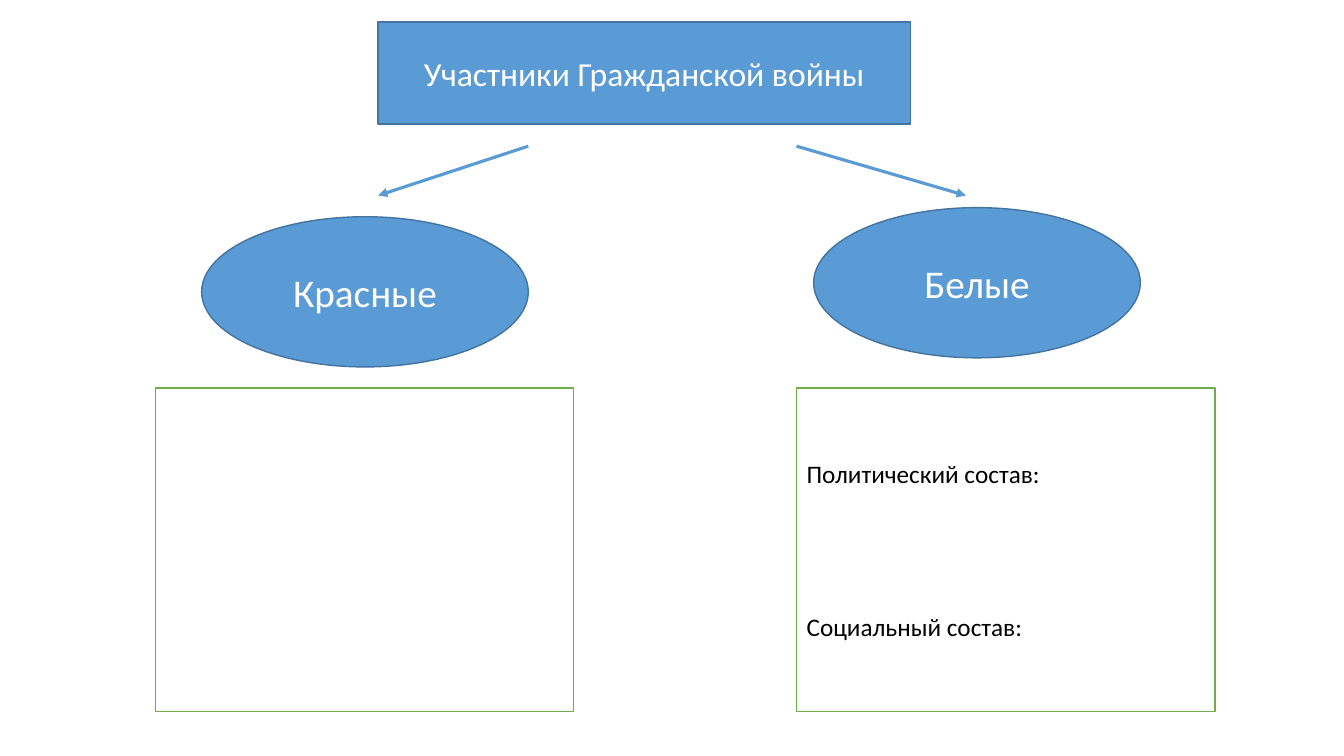
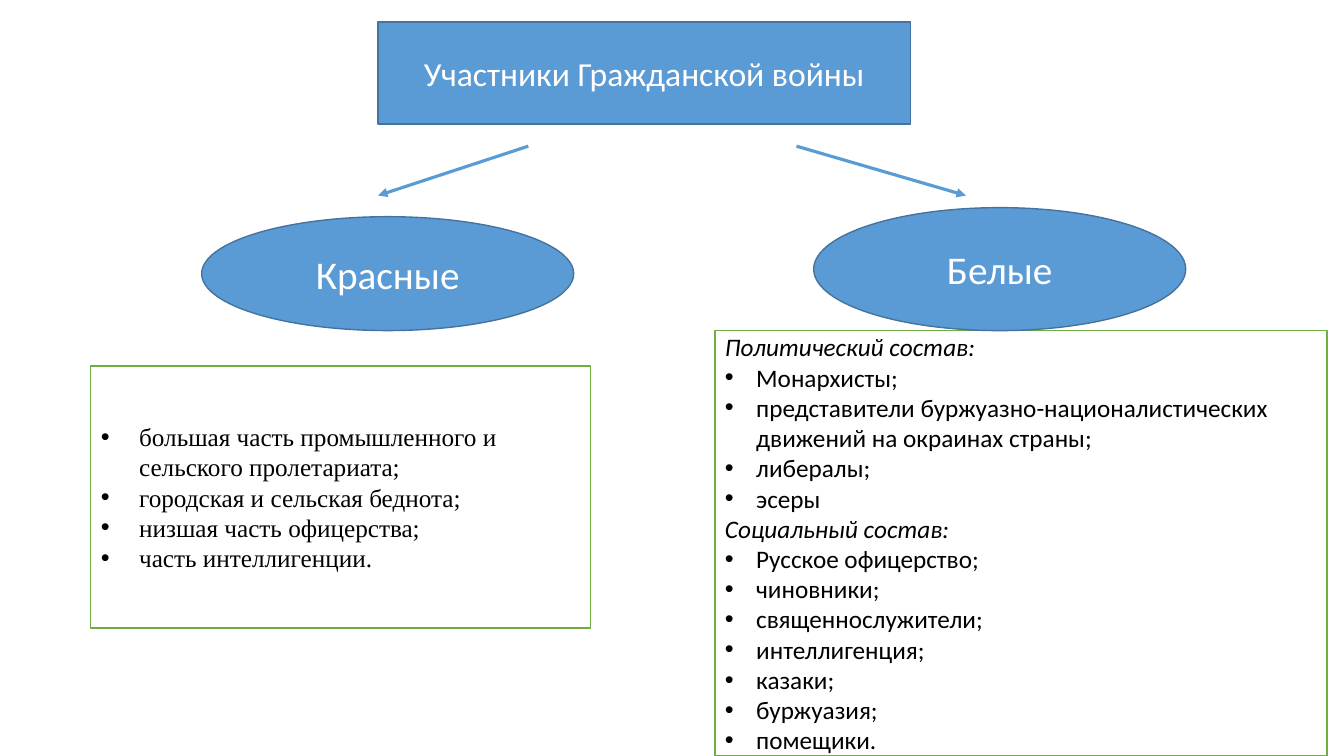
from lxml import etree
from pptx import Presentation
from pptx.dml.color import RGBColor
from pptx.enum import shapes, text
from pptx.oxml import ns
from pptx.util import Inches, Pt

COLORS = {
    "blue": "5B9BD5",
    "blue_edge": "43739E",
    "green": "70AD47",
    "white": "FFFFFF",
    "black": "000000",
}
FONT = "Calibri"
SERIF = "Times New Roman"
HEADING = "Участники Гражданской войны"
POLITICAL = "Политический состав:"
SOCIAL = "Социальный состав:"

HEADING_BOX = (3.75, 0.22, 5.28, 1.01)
ARROW_TOP, ARROW_BOTTOM = 1.45, 1.94
ARROWS = ((5.24, 3.75), (7.9, 9.58))

RED_LIST = (
    "большая часть промышленного и сельского пролетариата;",
    "городская и сельская беднота;",
    "низшая часть офицерства;",
    "часть интеллигенции.",
)
WHITE_POLITICAL = (
    "Монархисты;",
    "представители буржуазно-националистических движений на окраинах страны;",
    "либералы;",
    "эсеры",
)
WHITE_SOCIAL = (
    "Русское офицерство;",
    "чиновники;",
    "священнослужители;",
    "интеллигенция;",
    "казаки;",
    "буржуазия;",
    "помещики.",
)


def rgb(name):
    return RGBColor.from_string(COLORS[name])


def place(shape, box):
    shape.left, shape.top, shape.width, shape.height = map(Inches, box)


def paint(shape, fill, line):
    shape.fill.solid()
    shape.fill.fore_color.rgb = rgb(fill)
    shape.line.color.rgb = rgb(line)
    shape.line.width = Pt(1)


def setup_frame(shape):
    frame = shape.text_frame
    frame.word_wrap = True
    frame.auto_size = text.MSO_AUTO_SIZE.NONE
    frame.vertical_anchor = text.MSO_ANCHOR.MIDDLE
    return frame


def add_span(para, words, size, color, font=FONT, italic=False):
    span = para.add_run()
    span.text = words
    span.font.size = Pt(size)
    span.font.name = font
    span.font.italic = italic
    span.font.color.rgb = rgb(color)


def label(shape, words, size):
    """Paint a blue shape with one centred white line."""
    paint(shape, "blue", "blue_edge")
    para = setup_frame(shape).paragraphs[0]
    para.alignment = text.PP_ALIGN.CENTER
    add_span(para, words, size, "white")


def set_bullet(para, indent):
    """Hang a bullet by the indent, or remove it when the indent is 0."""
    props = para._p.get_or_add_pPr()
    props.set("marL", str(Inches(indent)))
    props.set("indent", str(-Inches(indent)))
    if indent:
        etree.SubElement(props, ns.qn("a:buChar")).set("char", "•")
    else:
        etree.SubElement(props, ns.qn("a:buNone"))


def add_arrow(page, start, end):
    arrow = page.shapes.add_connector(
        shapes.MSO_CONNECTOR.STRAIGHT, *map(Inches, start + end))
    arrow.line.color.rgb = rgb("blue")
    arrow.line.width = Pt(2.25)
    tail = etree.SubElement(arrow.line._get_or_add_ln(), ns.qn("a:tailEnd"))
    tail.set("type", "triangle")
    etree.SubElement(arrow._element.spPr, ns.qn("a:effectLst"))


def add_side(page, name, box):
    oval = page.shapes.add_shape(shapes.MSO_SHAPE.OVAL, *map(Inches, box))
    oval.shadow.inherit = False
    label(oval, name, 28)


def fill_panel(panel, groups, indent=0, font=FONT, gap=0):
    """Write groups of (heading or None, bulleted items), with a gap between."""
    frame = setup_frame(panel)
    para = None
    for number, (heading, items) in enumerate(groups):
        lines = [(heading, True)] if heading else []
        lines += [(item, False) for item in items]
        for position, (words, is_heading) in enumerate(lines):
            para = frame.add_paragraph() if para else frame.paragraphs[0]
            para.alignment = text.PP_ALIGN.LEFT
            para.line_spacing = 1.0
            para.space_before = Pt(gap if number and position == 0 else 0)
            set_bullet(para, 0 if is_heading else indent)
            add_span(para, words, 18, "black", font,
                     italic=is_heading and bool(items))


def add_panel(page, holder, box, content):
    """Turn the body placeholder into a framed list, or a plain empty frame."""
    if content:
        panel = holder
        place(panel, box)
        fill_panel(panel, **content)
    else:
        holder._element.getparent().remove(holder._element)
        panel = page.shapes.add_shape(
            shapes.MSO_SHAPE.RECTANGLE, *map(Inches, box))
        panel.shadow.inherit = False
    paint(panel, "white", "green")


def add_page(deck, sides):
    """Build one scheme from two sides: name, oval box, panel box, content."""
    page = deck.slides.add_slide(deck.slide_layouts.get_by_name("Two Content"))
    title, *holders = page.placeholders
    place(title, HEADING_BOX)
    label(title, HEADING, 24)
    for start, end in ARROWS:
        add_arrow(page, (start, ARROW_TOP), (end, ARROW_BOTTOM))
    for holder, (name, oval_box, panel_box, content) in zip(holders, sides):
        add_side(page, name, oval_box)
        add_panel(page, holder, panel_box, content)


def main():
    deck = Presentation()
    deck.slide_width, deck.slide_height = Inches(13.33), Inches(7.5)
    add_page(deck, (
        ("Красные", (2, 2.15, 3.24, 1.49), (1.54, 3.85, 4.15, 3.21), None),
        ("Белые", (8.07, 2.06, 3.24, 1.49), (7.9, 3.85, 4.15, 3.21),
         {"groups": ((POLITICAL, ()), (SOCIAL, ())), "gap": 88}),
    ))
    add_page(deck, (
        ("Красные", (2, 2.15, 3.69, 1.13), (0.9, 3.63, 4.96, 2.6),
         {"groups": ((None, RED_LIST),), "indent": 0.38, "font": SERIF}),
        ("Белые", (8.07, 2.06, 3.69, 1.22), (7.09, 3.28, 6.07, 4.22),
         {"groups": ((POLITICAL, WHITE_POLITICAL), (SOCIAL, WHITE_SOCIAL)),
          "indent": 0.31}),
    ))
    deck.save("out.pptx")


if __name__ == "__main__":
    main()
